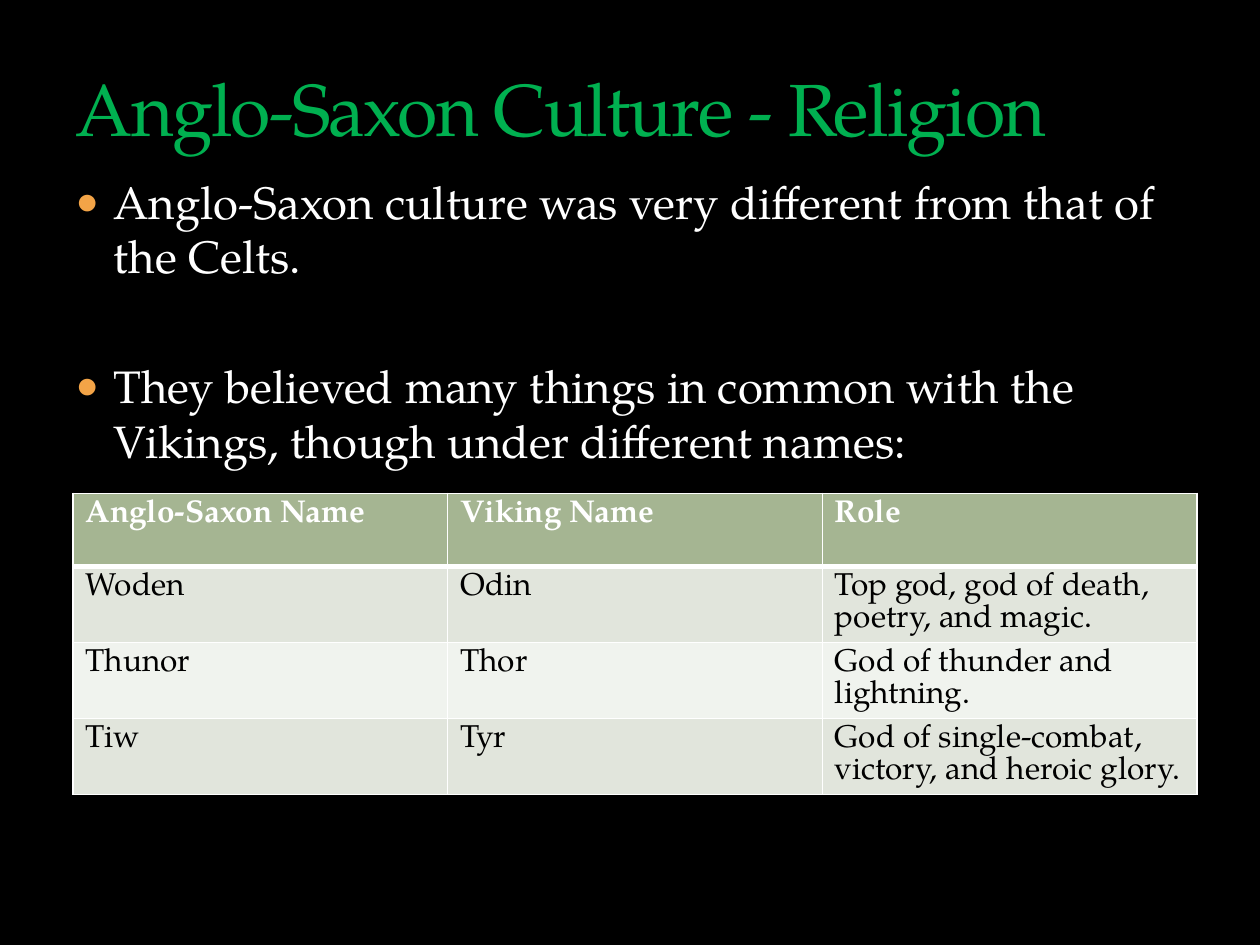
import pptx
import pptx.util
import pptx.dml.color
import pptx.enum.text
import pptx.oxml
import pptx.oxml.ns
import lxml.etree

RGB = pptx.dml.color.RGBColor
BLACK = RGB(0x00, 0x00, 0x00)
WHITE = RGB(0xFF, 0xFF, 0xFF)
GREEN = RGB(0x00, 0xB0, 0x50)
OLIVE = RGB(0x3C, 0x44, 0x22)
AMBER = RGB(0xF3, 0xA4, 0x47)
SAGE = RGB(0xA5, 0xB5, 0x92)
BANDS = RGB(0xE1, 0xE5, 0xDC), RGB(0xF0, 0xF3, 0xEE)
FONT = "TeX Gyre Pagella"
WIDE, HIGH = pptx.util.Inches(10), pptx.util.Inches(7.5)

POINTS = [
    "Anglo-Saxon culture was very different from that of the Celts.",
    "They believed many things in common with the Vikings, "
    "though under different names:",
]
GODS = [
    ["Anglo-Saxon Name", "Viking Name", "Role"],
    ["Woden", "Odin", "Top god, god of death, poetry, and magic."],
    ["Thunor", "Thor", "God of thunder and lightning."],
    ["Tiw", "Tyr", "God of single-combat, victory, and heroic glory."],
]


def add_xml(parent, tag, **attrs):
    node = lxml.etree.SubElement(parent, pptx.oxml.ns.qn(tag))
    for name, value in attrs.items():
        node.set(name, str(value))
    return node


def write(par, text, size=18, color=BLACK, bold=False):
    par.alignment = pptx.enum.text.PP_ALIGN.LEFT
    run = par.add_run()
    run.text = text
    font = run.font
    font.name, font.size, font.bold = FONT, pptx.util.Pt(size), bold
    font.color.rgb = color
    return run


def place(shape, box):
    shape.left, shape.top, shape.width, shape.height = box


def add_title(slide, box):
    title = slide.shapes.title
    place(title, box)
    frame = title.text_frame
    frame.word_wrap = True
    frame.auto_size = pptx.enum.text.MSO_AUTO_SIZE.NONE
    frame.vertical_anchor = pptx.enum.text.MSO_ANCHOR.BOTTOM
    run = write(frame.paragraphs[0], "Anglo-Saxon Culture - Religion", 42, GREEN)
    # Tight letters with a faint outline
    props = run.font._element
    props.set("spc", "-100")
    line = pptx.oxml.parse_xml(
        '<a:ln %s w="3175"><a:solidFill><a:srgbClr val="%s">'
        '<a:alpha val="25000"/></a:srgbClr></a:solidFill></a:ln>'
        % (pptx.oxml.ns.nsdecls("a"), OLIVE))
    props.insert(0, line)


def add_list(slide, box):
    body = slide.placeholders[1]
    place(body, box)
    frame = body.text_frame
    frame.word_wrap = True
    frame.auto_size = pptx.enum.text.MSO_AUTO_SIZE.NONE
    indent = pptx.util.Inches(0.3)
    for index, text in enumerate(POINTS):
        par = frame.add_paragraph() if index else frame.paragraphs[0]
        # The second point stands one line lower
        par.space_before = pptx.util.Pt(43 if index else 6)
        write(par, text, 26, WHITE)
        props = par._p.get_or_add_pPr()
        props.set("marL", str(indent))
        props.set("indent", str(-indent))
        tint = add_xml(props, "a:buClr")
        add_xml(tint, "a:srgbClr", val=AMBER)
        add_xml(props, "a:buSzPct", val=85000)
        add_xml(props, "a:buChar", char="●")


def add_border(cell, side, width):
    line = add_xml(cell._tc.get_or_add_tcPr(), "a:" + side,
                   w=pptx.util.Pt(width))
    fill = add_xml(line, "a:solidFill")
    add_xml(fill, "a:srgbClr", val=WHITE)


def add_gods(slide, box):
    rows, cols = len(GODS), len(GODS[0])
    table = slide.shapes.add_table(rows, cols, *box).table
    for r, names in enumerate(GODS):
        head = r == 0
        for c, name in enumerate(names):
            cell = table.cell(r, c)
            for side in ("lnL", "lnR", "lnT", "lnB"):
                thick = (head and side == "lnB") or (r == 1 and side == "lnT")
                add_border(cell, side, 3 if thick else 1)
            cell.fill.solid()
            cell.fill.fore_color.rgb = SAGE if head else BANDS[(r - 1) % 2]
            write(cell.text_frame.paragraphs[0], name,
                  color=WHITE if head else BLACK, bold=head)


def main():
    deck = pptx.Presentation()
    deck.slide_width, deck.slide_height = WIDE, HIGH
    slide = deck.slides.add_slide(deck.slide_layouts[1])
    back = slide.background.fill
    back.solid()
    back.fore_color.rgb = BLACK

    def area(left, top, width, height):
        return [int(WIDE * left), int(HIGH * top),
                int(WIDE * width), int(HIGH * height)]

    add_title(slide, area(0.05, 0, 0.9, 1 / 6))
    add_list(slide, area(0.05, 0.177, 0.9, 0.323))
    add_gods(slide, area(0.058, 0.522, 0.892, 0.31))
    deck.save("out.pptx")


if __name__ == "__main__":
    main()
